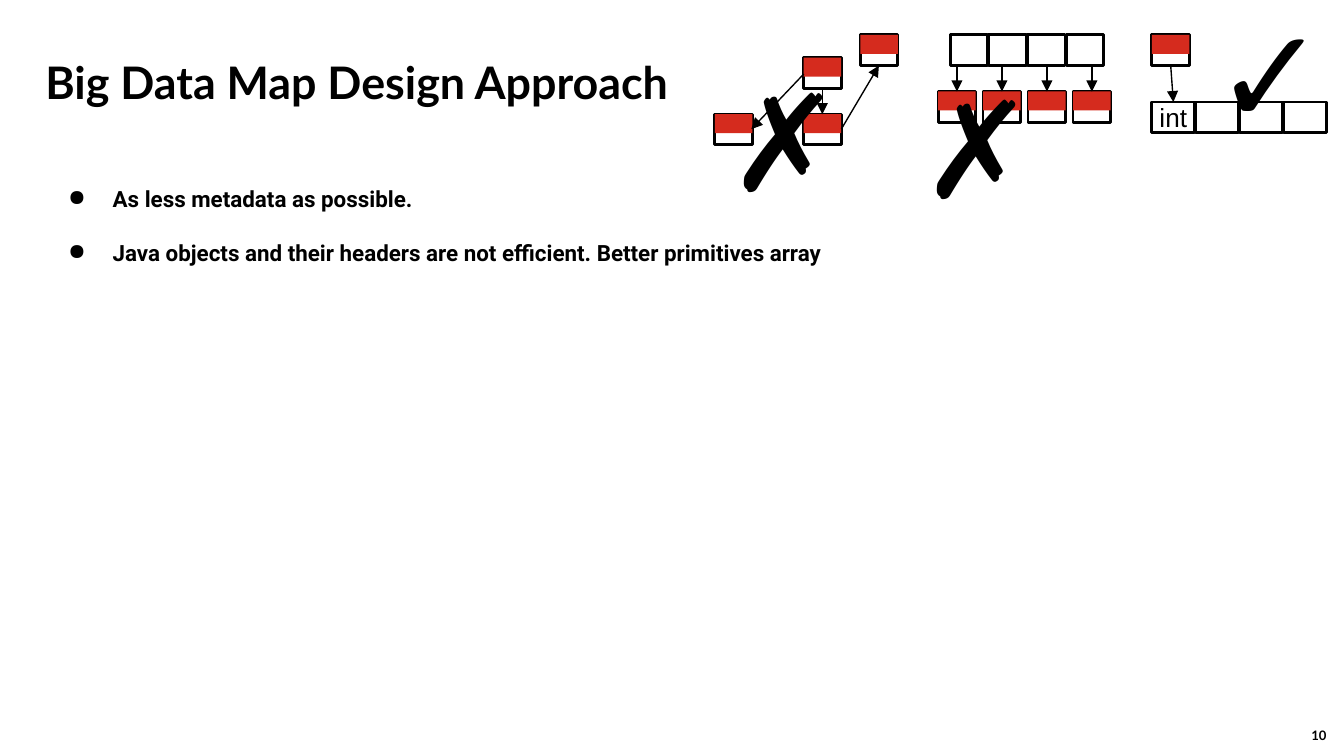
from dataclasses import dataclass

from lxml import etree
from pptx import Presentation
from pptx import util as u
from pptx.dml.color import RGBColor
from pptx.enum import shapes, text
from pptx.oxml.ns import qn


@dataclass(frozen=True)
class Theme:
    ink: str = "000000"
    paper: str = "FFFFFF"
    header: str = "D52B1E"
    heading_font: str = "Lato"
    body_font: str = "Roboto"
    cell_font: str = "Arial"
    title: int = 24
    body: int = 12
    number: int = 7
    cell: int = 14
    mark: int = 72
    border: float = 1.5
    arrow: float = 0.75


TH = Theme()
TITLE = "Big Data Map Design Approach"
BULLETS = [
    "As less metadata as possible.",
    "Java objects and their headers are not efficient. Better primitives array",
]
NUMBER = "10"

NODE_W, NODE_H, HEADER_H = 0.71, 0.58, 0.36
TOP_Y = 0.66
LINKED_NODES = [(15.19, 1.09), (13.51, 2.16), (15.19, 2.16), (16.26, TOP_Y)]
LINKS = [
    (15.54, 1.67, 15.54, 2.16),
    (15.19, 1.4, 14.2, 2.44),
    (15.9, 2.44, 16.61, 1.24),
]
SLOTS = {"x": 17.96, "y": TOP_Y, "pitch": 0.73, "w": NODE_W, "labels": ["", "", "", ""]}
OBJECTS = {"x": 17.73, "y": 1.73, "pitch": 0.85, "count": 4}
PRIMITIVES = {"x": 21.77, "y": 1.93, "pitch": 0.83, "w": 0.81, "labels": ["int", "", "", ""]}
MARKS = [("✓", 22.71, -0.43), ("✗", 13.51, 0.84), ("✗", 17.17, 0.97)]


def add_text(sp, lines, font=TH.heading_font, size=TH.body, bold=False, align=text.PP_ALIGN.LEFT,
             anchor=text.MSO_ANCHOR.TOP, spacing=None, inset=0, bullet=None):
    tf = sp.text_frame
    tf.word_wrap = True
    tf.vertical_anchor = anchor
    tf.margin_left = tf.margin_right = tf.margin_top = tf.margin_bottom = u.Cm(inset)
    for i, line in enumerate(lines):
        p = tf.paragraphs[0] if i == 0 else tf.add_paragraph()
        p.alignment = align
        if spacing:
            p.line_spacing = spacing
        if bullet:
            ppr = p._p.get_or_add_pPr()
            ppr.set("marL", str(u.Cm(1.27)))
            ppr.set("indent", str(u.Cm(-0.84)))
            etree.SubElement(ppr, qn("a:buChar")).set("char", bullet)
        r = p.add_run()
        r.text = line
        r.font.name, r.font.size, r.font.bold = font, u.Pt(size), bold
        r.font.color.rgb = RGBColor.from_string(TH.ink)


def add_box(s, x, y, w, h):
    return s.shapes.add_textbox(u.Cm(x), u.Cm(y), u.Cm(w), u.Cm(h))


def add_rect(s, x, y, w, h, fill, outlined=True):
    sp = s.shapes.add_shape(shapes.MSO_SHAPE.RECTANGLE, u.Cm(x), u.Cm(y), u.Cm(w), u.Cm(h))
    sp.shadow.inherit = False
    sp.fill.solid()
    sp.fill.fore_color.rgb = RGBColor.from_string(fill)
    if outlined:
        sp.line.color.rgb = RGBColor.from_string(TH.ink)
        sp.line.width = u.Pt(TH.border)
    else:
        sp.line.fill.background()
    return sp


def add_node(s, x, y):
    add_rect(s, x, y, NODE_W, NODE_H, TH.paper)
    add_rect(s, x, y, NODE_W, HEADER_H, TH.header, outlined=False)


def add_array(s, array):
    for i, label in enumerate(array["labels"]):
        sp = add_rect(s, array["x"] + i * array["pitch"], array["y"], array["w"], NODE_H, TH.paper)
        if label:
            add_text(sp, [label], font=TH.cell_font, size=TH.cell,
                     align=text.PP_ALIGN.CENTER, anchor=text.MSO_ANCHOR.MIDDLE)


def add_arrow(s, x1, y1, x2, y2):
    sp = s.shapes.add_connector(shapes.MSO_CONNECTOR.STRAIGHT, u.Cm(x1), u.Cm(y1), u.Cm(x2), u.Cm(y2))
    sp.line.color.rgb = RGBColor.from_string(TH.ink)
    sp.line.width = u.Pt(TH.arrow)
    etree.SubElement(sp.line._get_or_add_ln(), qn("a:tailEnd")).set("type", "triangle")
    etree.SubElement(sp._element.spPr, qn("a:effectLst"))


def main():
    prs = Presentation()
    prs.slide_width, prs.slide_height = u.Cm(25.4), u.Cm(14.29)
    s = prs.slides.add_slide(prs.slide_layouts[6])

    add_text(add_box(s, 0.86, 1.24, 23.67, 1.6), [TITLE], size=TH.title, bold=True, spacing=0.8)
    add_text(add_box(s, 0.86, 3.0, 23.67, 9.5), BULLETS, font=TH.body_font, bold=True,
             spacing=2.0, bullet="●")
    add_text(add_box(s, 23.55, 12.95, 1.52, 1.09), [NUMBER], size=TH.number, bold=True,
             align=text.PP_ALIGN.RIGHT, anchor=text.MSO_ANCHOR.BOTTOM)

    for x, y in LINKED_NODES:
        add_node(s, x, y)
    for link in LINKS:
        add_arrow(s, *link)

    add_array(s, SLOTS)
    for i in range(OBJECTS["count"]):
        x = OBJECTS["x"] + i * OBJECTS["pitch"]
        add_node(s, x, OBJECTS["y"])
        add_arrow(s, x + NODE_W / 2, TOP_Y + NODE_H, x + NODE_W / 2, OBJECTS["y"])

    add_array(s, PRIMITIVES)
    x, y = PRIMITIVES["x"], PRIMITIVES["y"]
    add_node(s, x, TOP_Y)
    add_arrow(s, x + NODE_W / 2, TOP_Y + NODE_H, x + PRIMITIVES["w"] / 2, y)

    for mark, x, y in MARKS:
        add_text(add_box(s, x, y, 1.42, 1.7), [mark], font=TH.body_font, size=TH.mark, inset=0.25)

    prs.save("out.pptx")


if __name__ == "__main__":
    main()
